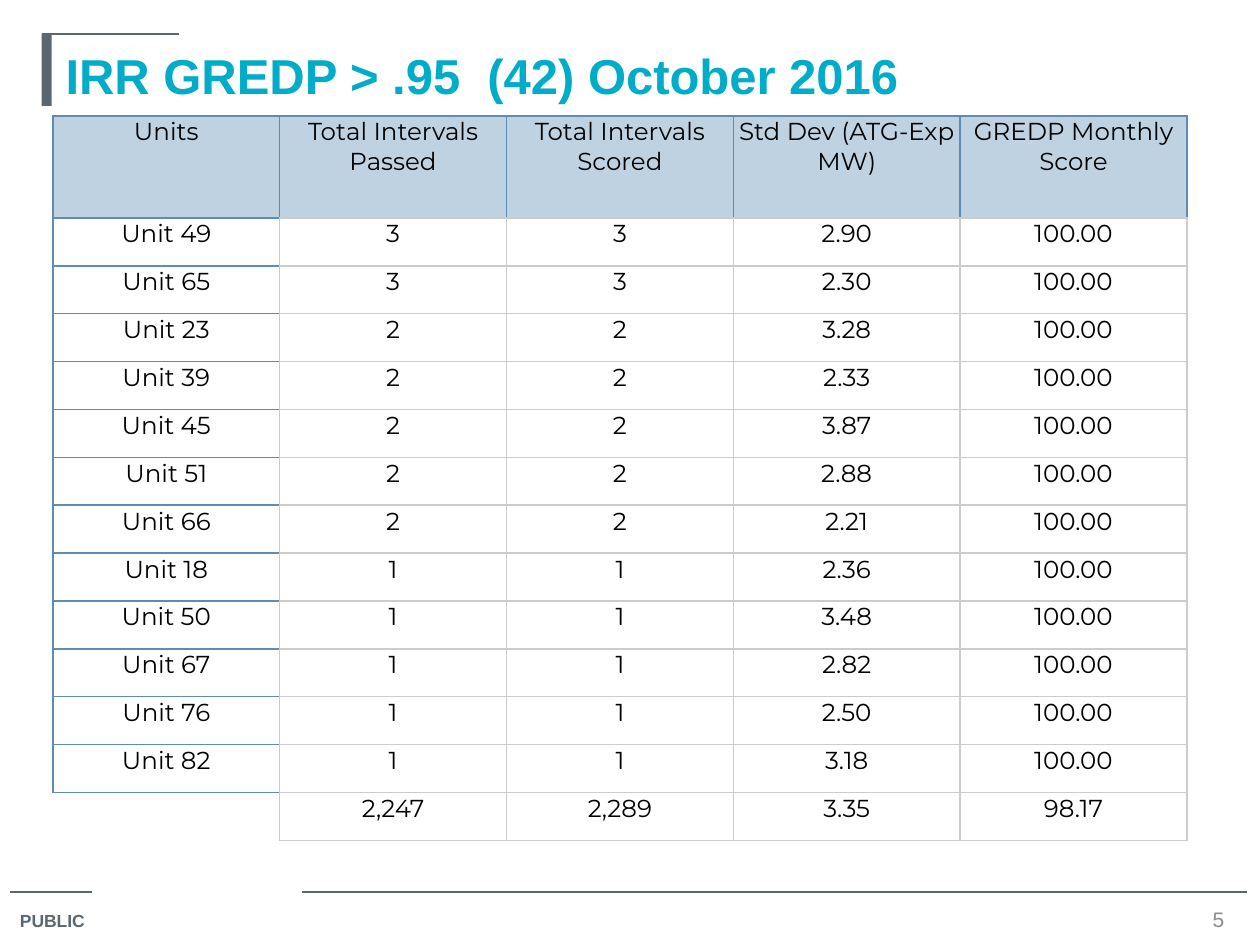
import pptx
import pptx.util
import pptx.dml.color
import pptx.enum.shapes
import pptx.enum.text
import pptx.oxml
from lxml import etree

Inches, Pt = pptx.util.Inches, pptx.util.Pt
PP_ALIGN, ANCHOR = pptx.enum.text.PP_ALIGN, pptx.enum.text.MSO_ANCHOR
NS = "http://schemas.openxmlformats.org/drawingml/2006/main"
SLATE, BLUE, GREY = "5B6770", "608BB4", "CCCCCC"


def rgb(value):
    return pptx.dml.color.RGBColor.from_string(value)


def write(tf, text, color, align, fmt):
    tf.text = text
    p = tf.paragraphs[0]
    p.alignment = align
    r = p.runs[0]
    for name, value in fmt.items():
        setattr(r.font, name, value)
    r.font.color.rgb = rgb(color)


prs = pptx.Presentation()
prs.slide_width, prs.slide_height = Inches(10), Inches(7.5)
s = prs.slides.add_slide(prs.slide_layouts[5])

# Footer rules and the rule over the title
for x1, x2, y in [(0.08, 0.73, 7.08), (2.4, 9.9, 7.08), (0.33, 1.42, 0.27)]:
    line = s.shapes.add_connector(pptx.enum.shapes.MSO_CONNECTOR.STRAIGHT,
                                  Inches(x1), Inches(y), Inches(x2), Inches(y))
    line.line.color.rgb = rgb(SLATE)
    line.line.width = Pt(0.75)
    etree.SubElement(line._element.spPr, f"{{{NS}}}effectLst")

# Bar beside the title
bar = s.shapes.add_shape(pptx.enum.shapes.MSO_SHAPE.RECTANGLE,
                         Inches(0.33), Inches(0.27), Inches(0.08), Inches(0.57))
bar.shadow.inherit = False
bar.fill.solid()
bar.fill.fore_color.rgb = rgb(SLATE)
bar.line.fill.background()

# Title
title = s.shapes.title
title.left, title.top, title.width, title.height = map(Inches, (0.42, 0.27, 9.25, 0.65))
title.text_frame.vertical_anchor = ANCHOR.MIDDLE
write(title.text_frame, "IRR GREDP > .95  (42) October 2016", "00ACC8", PP_ALIGN.LEFT,
      {"name": "Arial", "size": Pt(28), "bold": True})

# Footer label and page number
footers = [
    ((0.06, 7.17, 0.77, 0.28), "PUBLIC", SLATE, PP_ALIGN.LEFT, ANCHOR.TOP, 10, True),
    ((9.42, 7.18, 0.5, 0.23), "5", "8C8C8C", PP_ALIGN.CENTER, ANCHOR.MIDDLE, 12, False),
]
for box, text, color, align, anchor, size, bold in footers:
    tf = s.shapes.add_textbox(*map(Inches, box)).text_frame
    tf.word_wrap = True
    tf.vertical_anchor = anchor
    write(tf, text, color, align, {"name": "Arial", "size": Pt(size), "bold": bold})

# Table contents
header = ["Units", "Total Intervals Passed", "Total Intervals Scored",
          "Std Dev (ATG-Exp MW)", "GREDP Monthly Score"]
units = [(49, 3, "2.90"), (65, 3, "2.30"), (23, 2, "3.28"), (39, 2, "2.33"),
         (45, 2, "3.87"), (51, 2, "2.88"), (66, 2, "2.21"), (18, 1, "2.36"),
         (50, 1, "3.48"), (67, 1, "2.82"), (76, 1, "2.50"), (82, 1, "3.18")]
rows = [header]
rows += [[f"Unit {unit}", str(n), str(n), dev, "100.00"] for unit, n, dev in units]
rows.append(["", "2,247", "2,289", "3.35", "98.17"])
last = len(rows) - 1

# Table grid
table = s.shapes.add_table(len(rows), len(header), Inches(0.42), Inches(0.92),
                           Inches(9), Inches(5.75)).table
table.first_row = table.horz_banding = False
for col in table.columns:
    col.width = Inches(1.8)
for i, row in enumerate(table.rows):
    row.height = Inches(0.38 if i else 0.81)

# Cells: text, fill and the borders in the order left, right, top, bottom
margins = {"margin_left": 0.01, "margin_right": 0.01, "margin_top": 0.01, "margin_bottom": 0}
for i, values in enumerate(rows):
    for j, text in enumerate(values):
        cell = table.cell(i, j)
        for name, value in margins.items():
            setattr(cell, name, Inches(value))
        if text:
            write(cell.text_frame, text, "000000", PP_ALIGN.CENTER,
                  {"name": "Montserrat", "size": Pt(14)})
        if i == 0:
            cell.fill.solid()
            cell.fill.fore_color.rgb = rgb("BFD2E2")
            borders = [BLUE, BLUE, BLUE, GREY if j else BLUE]
        else:
            cell.fill.background()
            if j:
                borders = [GREY] * 4
            elif i < last:
                borders = [BLUE, GREY, BLUE, BLUE]
            else:
                borders = [None, GREY, BLUE, None]
        tcPr = cell._tc.get_or_add_tcPr()
        for k, (side, color) in enumerate(zip("LRTB", borders)):
            paint = (f'<a:solidFill><a:srgbClr val="{color}"/></a:solidFill>'
                     if color else "<a:noFill/>")
            tcPr.insert(k, pptx.oxml.parse_xml(
                f'<a:ln{side} xmlns:a="{NS}" w="12700">{paint}</a:ln{side}>'))

prs.save("out.pptx")
